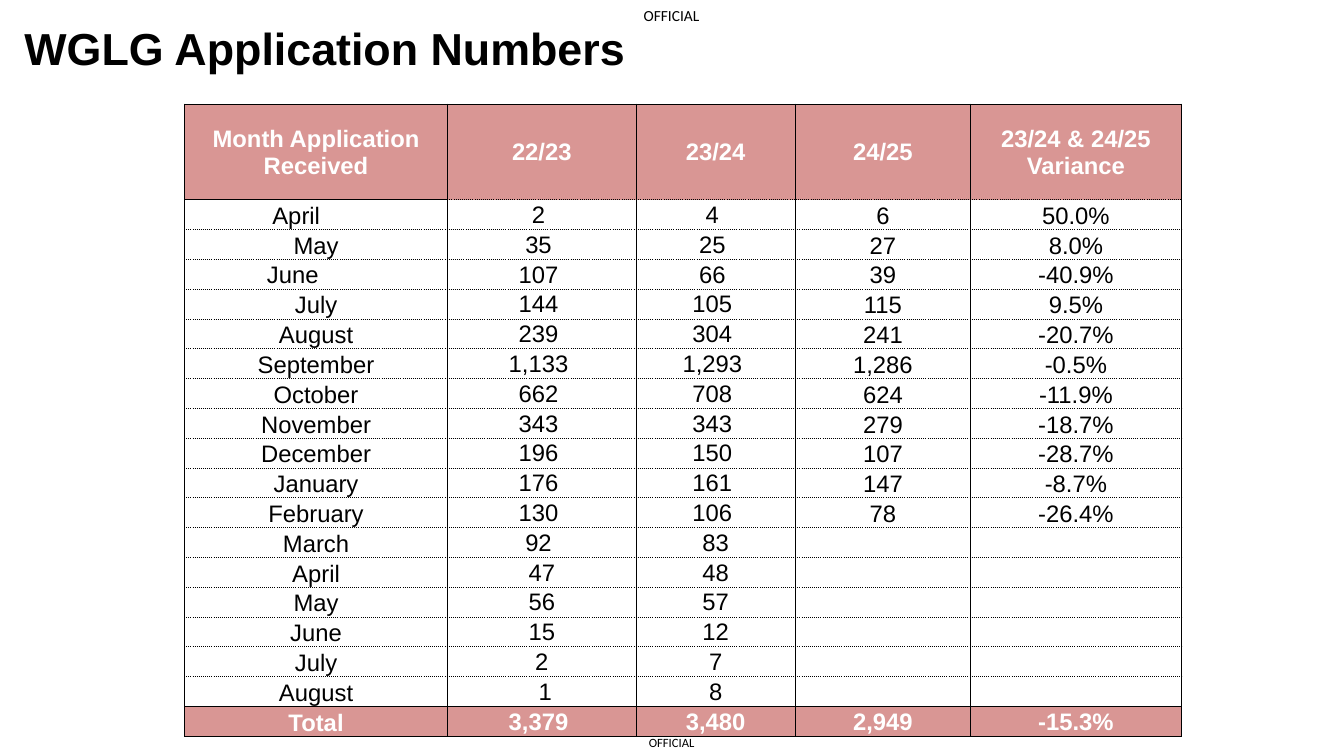
from dataclasses import dataclass

from lxml.etree import SubElement
from pptx import Presentation
from pptx.dml.color import RGBColor
from pptx.enum.text import MSO_ANCHOR as Anchor, MSO_AUTO_SIZE as AutoSize, PP_ALIGN as Align
from pptx.oxml.ns import qn
from pptx.slide import Slide
from pptx.table import _Cell as Cell
from pptx.text.text import _Paragraph as Paragraph
from pptx.util import Cm, Pt

COLOURS = {"text": "000000", "light": "FFFFFF", "band": "D99694", "rule": "000000"}
TABLE_SIZE = 17
HEADER_HEIGHT, MONTH_HEIGHT = 2.41, 0.75
COLUMN_WIDTHS = (6.63, 4.75, 4.01, 4.42, 5.31)
MONTH_ANCHORS = (Anchor.BOTTOM, Anchor.MIDDLE, Anchor.MIDDLE, Anchor.BOTTOM, Anchor.BOTTOM)
TOTAL_ANCHORS = (Anchor.BOTTOM,) + (Anchor.MIDDLE,) * 4


@dataclass(frozen=True)
class Marking:
    left: float
    top: float
    width: float
    height: float
    size: float


@dataclass(frozen=True)
class TableRow:
    values: tuple[str, ...]
    month_inset: float = 0.03


MARKINGS = (Marking(16.0, 18.36, 1.85, 0.69, 9), Marking(15.82, 0, 2.21, 0.79, 11))
ROWS = (
    TableRow(("Month Application Received", "22/23", "23/24", "24/25", "23/24 & 24/25 Variance")),
    TableRow(("April", "2 ", "4 ", "6", "50.0%"), 1.03),
    TableRow(("May", "35 ", "25 ", "27", "8.0%")),
    TableRow(("June", "107 ", "66 ", "39", "-40.9%"), 1.2),
    TableRow(("July", "144 ", "105 ", "115", "9.5%")),
    TableRow(("August", "239 ", "304 ", "241", "-20.7%")),
    TableRow(("September", "1,133 ", "1,293 ", "1,286", "-0.5%")),
    TableRow(("October", "662 ", "708 ", "624", "-11.9%")),
    TableRow(("November", "343 ", "343 ", "279", "-18.7%")),
    TableRow(("December", "196 ", "150 ", "107", "-28.7%")),
    TableRow(("January", "176 ", "161 ", "147", "-8.7%")),
    TableRow(("February", "130 ", "106 ", "78", "-26.4%")),
    TableRow(("March", "92 ", "83", "", "")),
    TableRow(("April", "47", "48", "", "")),
    TableRow(("May", "56", "57", "", "")),
    TableRow(("June", "15", "12", "", "")),
    TableRow(("July", "2", "7", "", "")),
    TableRow(("August", " 1", "8", "", "")),
    TableRow(("Total", "3,379 ", "3,480", "2,949", "-15.3%")),
)


def format_text(paragraph: Paragraph, size: float, face: str, colour: str,
                bold: bool = False, align: Align = Align.CENTER) -> None:
    """Align a paragraph and set the font of its runs."""
    paragraph.alignment = align
    for run in paragraph.runs:
        run.font.size, run.font.name, run.font.bold = Pt(size), face, bold
        run.font.color.rgb = RGBColor.from_string(COLOURS[colour])


def add_marking(slide: Slide, marking: Marking) -> None:
    """Place one classification marking."""
    label = slide.shapes.add_textbox(
        Cm(marking.left), Cm(marking.top), Cm(marking.width), Cm(marking.height))
    frame = label.text_frame
    frame.margin_left = frame.margin_top = frame.margin_right = frame.margin_bottom = 0
    frame.vertical_anchor = Anchor.MIDDLE
    frame.text = "OFFICIAL"
    format_text(frame.paragraphs[0], marking.size, "Calibri", "text")


def set_title(slide: Slide) -> None:
    """Fill and position the slide title."""
    title = slide.shapes.title
    title.left, title.top, title.width, title.height = Cm(0.36), Cm(0.39), Cm(20.22), Cm(2.9)
    frame = title.text_frame
    frame.auto_size = AutoSize.NONE
    frame.vertical_anchor = Anchor.TOP
    frame.text = "WGLG Application Numbers"
    format_text(frame.paragraphs[0], 32, "Arial", "text", True, Align.LEFT)


def add_borders(cell: Cell, dotted: str) -> None:
    """Rule all four sides of a cell, with the sides listed in dotted as dots."""
    properties = cell._tc.get_or_add_tcPr()
    for side in "LRTB":
        line = SubElement(properties, qn(f"a:ln{side}"), w=str(Pt(0.5)))
        fill = SubElement(line, qn("a:solidFill"))
        SubElement(fill, qn("a:srgbClr"), val=COLOURS["rule"])
        SubElement(line, qn("a:prstDash"), val="dot" if side in dotted else "solid")


def dotted_sides(row: int, column: int) -> str:
    """Return the sides of a cell that carry a dotted rule."""
    last_month = len(ROWS) - 2
    if row > last_month:
        return ""
    top = row > 1 or (row == 1 and column > 0)
    bottom = 0 < row < last_month or (row == 0 and column > 0)
    return "T" * top + "B" * bottom


def fill_cell(cell: Cell, value: str, banded: bool, anchor: Anchor, inset: float) -> None:
    """Write and format one table cell."""
    cell.margin_left = cell.margin_top = Cm(0.03)
    cell.margin_right, cell.margin_bottom = Cm(inset), 0
    cell.vertical_anchor = anchor
    if banded:
        cell.fill.solid()
        cell.fill.fore_color.rgb = RGBColor.from_string(COLOURS["band"])
    else:
        cell.fill.background()
    cell.text_frame.text = value
    paragraph = cell.text_frame.paragraphs[0]
    format_text(paragraph, TABLE_SIZE, "Arial", "light" if banded else "text", banded)
    if not value:
        SubElement(paragraph._p, qn("a:endParaRPr"), sz=str(TABLE_SIZE * 100))


def add_applications(slide: Slide) -> None:
    """Build the table of applications by month."""
    total = len(ROWS) - 1
    height = HEADER_HEIGHT + total * MONTH_HEIGHT
    applications = slide.shapes.add_table(
        len(ROWS), len(COLUMN_WIDTHS), Cm(4.65), Cm(2.62),
        Cm(sum(COLUMN_WIDTHS)), Cm(height)).table
    applications.horz_banding = False
    for column, width in zip(applications.columns, COLUMN_WIDTHS):
        column.width = Cm(width)
    for r, row in enumerate(ROWS):
        applications.rows[r].height = Cm(MONTH_HEIGHT if r else HEADER_HEIGHT)
        anchors = {0: (Anchor.MIDDLE,) * 5, total: TOTAL_ANCHORS}.get(r, MONTH_ANCHORS)
        for c, value in enumerate(row.values):
            cell = applications.cell(r, c)
            add_borders(cell, dotted_sides(r, c))
            fill_cell(cell, value, r in (0, total), anchors[c], 0.03 if c else row.month_inset)


def main() -> None:
    """Build the slide and save it."""
    deck = Presentation()
    deck.slide_width, deck.slide_height = Cm(33.87), Cm(19.05)
    slide = deck.slides.add_slide(deck.slide_layouts[5])
    for marking in MARKINGS:
        add_marking(slide, marking)
    set_title(slide)
    add_applications(slide)
    deck.save("out.pptx")


if __name__ == "__main__":
    main()
